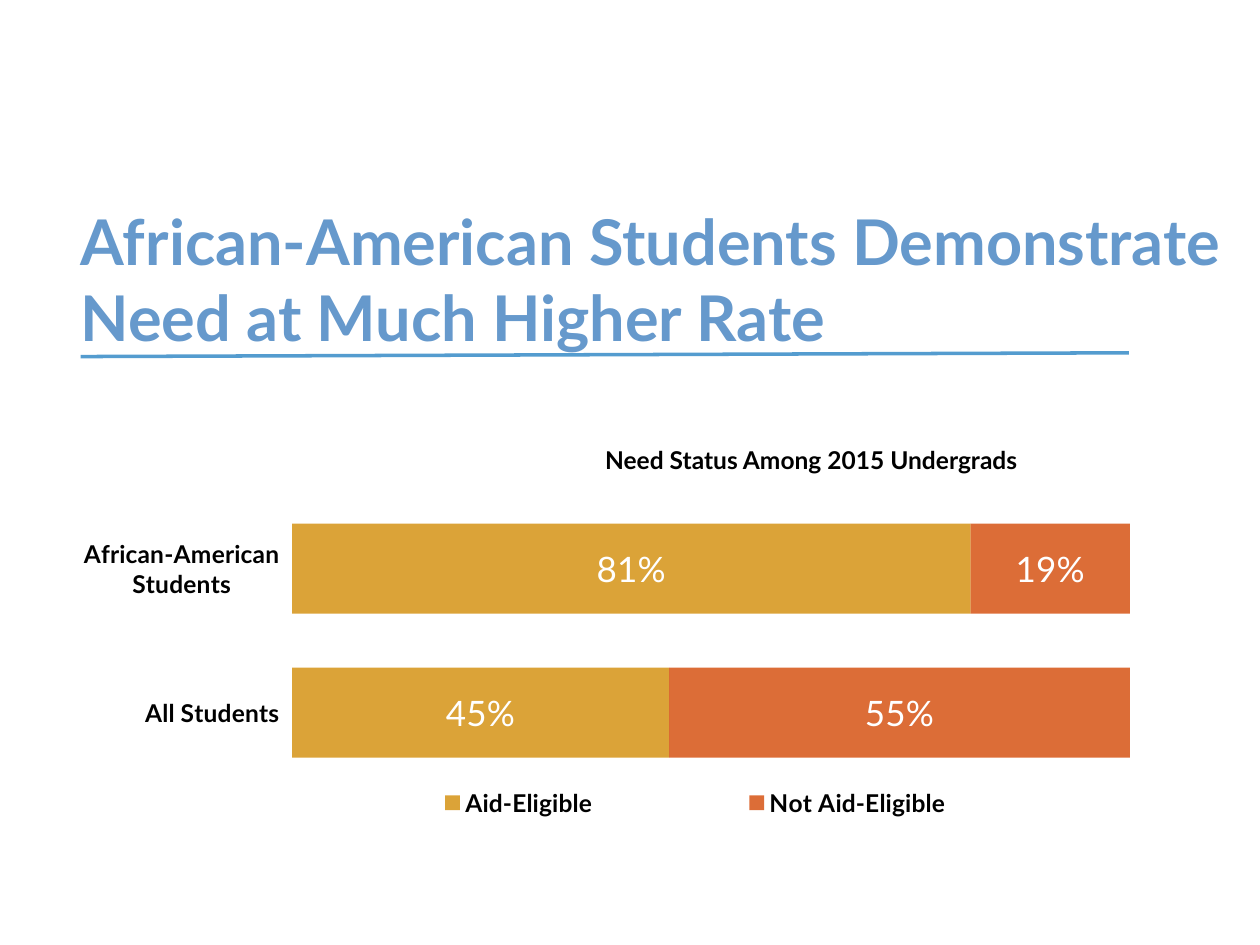
from lxml import etree
from pptx import Presentation
from pptx.chart.data import CategoryChartData
from pptx.dml.color import RGBColor
from pptx.enum.chart import XL_CHART_TYPE, XL_LABEL_POSITION, XL_LEGEND_POSITION, XL_TICK_MARK
from pptx.enum.shapes import MSO_CONNECTOR
from pptx.enum.text import MSO_ANCHOR, MSO_AUTO_SIZE, PP_ALIGN
from pptx.oxml.ns import qn
from pptx.util import Inches, Pt


def set_font(font, size, color, bold=False):
    values = {"name": "Lato", "size": Pt(size), "bold": bold}
    for name, value in values.items():
        setattr(font, name, value)
    font.color.rgb = RGBColor.from_string(color)


def manual_layout(x, y, w, h, inner=False):
    """Return a c:layout element placed in fractions of the chart area."""
    layout = etree.Element(qn("c:layout"))
    manual = etree.SubElement(layout, qn("c:manualLayout"))
    values = {"layoutTarget": "inner"} if inner else {}
    values.update(xMode="edge", yMode="edge", x=x, y=y, w=w, h=h)
    for name, value in values.items():
        etree.SubElement(manual, qn(f"c:{name}"), val=str(value))
    return layout


prs = Presentation()
prs.slide_width, prs.slide_height = Inches(10), Inches(7.5)
s = prs.slides.add_slide(prs.slide_layouts[5])

# Need status chart
data = CategoryChartData(number_format="0%")
data.categories = ["All Students", "African-American Students"]
data.add_series("Aid-Eligible", [0.45, 0.81])
data.add_series("Not Aid-Eligible", [0.55, 0.19])
chart = s.shapes.add_chart(XL_CHART_TYPE.BAR_STACKED, Inches(0.64), Inches(3.49),
                           Inches(8.56), Inches(3.05), data).chart
chart.has_title = False
set_font(chart.font, 10, "000000")

plot = chart.plots[0]
plot.gap_width, plot.overlap, plot.vary_by_categories = 60, 100, False
for series, color in zip(plot.series, ["D38C07", "D44906"]):
    fill = series.format.fill
    fill.solid()
    fill.fore_color.rgb = RGBColor.from_string(color)
    rgb = series._element.find(".//" + qn("a:srgbClr"))
    etree.SubElement(rgb, qn("a:alpha"), val="80000")
    labels = series.data_labels
    label_format = {"show_value": True, "position": XL_LABEL_POSITION.CENTER,
                    "number_format": "0%", "number_format_is_linked": False}
    for name, value in label_format.items():
        setattr(labels, name, value)
    set_font(labels.font, 20, "FFFFFF")

axis = chart.category_axis
axis.major_tick_mark = XL_TICK_MARK.OUTSIDE
axis.format.line.fill.background()
set_font(axis.tick_labels.font, 14, "000000", True)

axis_format = {"visible": False, "has_major_gridlines": False,
               "minimum_scale": 0, "maximum_scale": 1, "major_unit": 0.25}
for name, value in axis_format.items():
    setattr(chart.value_axis, name, value)

chart.has_legend = True
legend = chart.legend
legend.position = XL_LEGEND_POSITION.RIGHT
legend.include_in_layout = True
set_font(legend.font, 14, "000000", True)
legend._element.find(qn("c:overlay")).addprevious(manual_layout(0.2, 0.89, 0.74, 0.11))

plot_area = chart._chartSpace.chart.plotArea
for layout in plot_area.findall(qn("c:layout")):
    plot_area.remove(layout)
plot_area.insert(0, manual_layout(0.196, 0.148, 0.777, 0.75, inner=True))

# Slide title and chart heading
heading = s.shapes.add_textbox(0, 0, 0, 0)
texts = [
    (s.shapes.title, (0.64, 1.61, 9.37, 1.21), MSO_ANCHOR.TOP, PP_ALIGN.LEFT, 36, "6699CC",
     "African-American Students Demonstrate Need at Much Higher Rate"),
    (heading, (4.01, 3.3, 4.86, 0.7), MSO_ANCHOR.MIDDLE, PP_ALIGN.CENTER, 14, "000000",
     "Need Status Among 2015 Undergrads"),
]
for sp, box, anchor, align, size, color, text in texts:
    sp.left, sp.top, sp.width, sp.height = map(Inches, box)
    tf = sp.text_frame
    frame_format = {"word_wrap": True, "auto_size": MSO_AUTO_SIZE.NONE, "vertical_anchor": anchor,
                    "margin_left": 0, "margin_top": 0, "margin_right": 0, "margin_bottom": 0}
    for name, value in frame_format.items():
        setattr(tf, name, value)
    p = tf.paragraphs[0]
    p.alignment = align
    r = p.add_run()
    r.text = text
    set_font(r.font, size, color, True)

# Rule under the title
rule = s.shapes.add_connector(MSO_CONNECTOR.STRAIGHT, Inches(0.64), Inches(2.83),
                              Inches(8.96), Inches(2.8))
rule.line.color.rgb = RGBColor.from_string("549CCF")
rule.line.width = Pt(2)
etree.SubElement(rule._element.spPr, qn("a:effectLst"))

prs.save("out.pptx")
